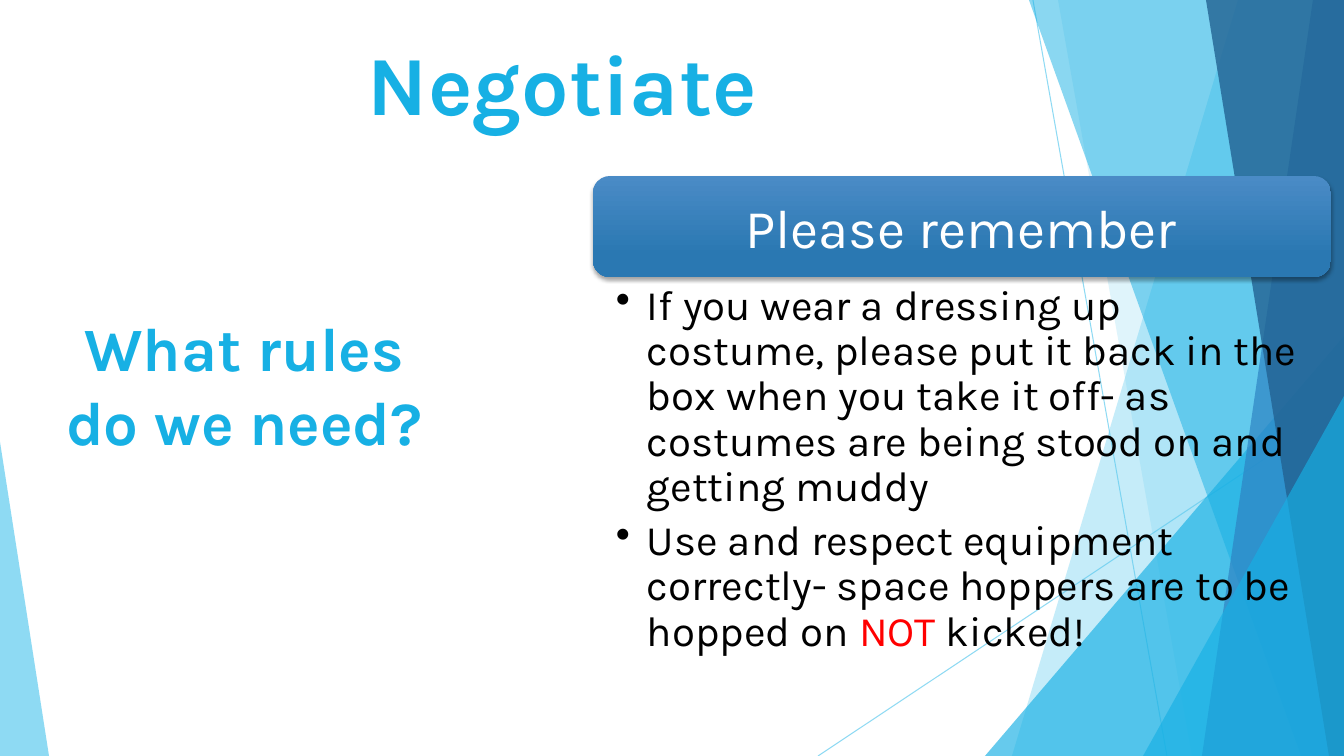
import pptx
import pptx.util
import pptx.dml.color
import pptx.enum.shapes
import pptx.enum.text
import pptx.oxml
import pptx.oxml.ns

WIDE, HIGH = 1344, 756
SKY, CYAN, BLUE, NAVY = "5FCBEF", "17B0E4", "2E83C3", "226292"
KIND = pptx.enum.shapes.MSO_SHAPE
ALIGN = pptx.enum.text.PP_ALIGN
MID = pptx.enum.text.MSO_ANCHOR.MIDDLE
TOP = pptx.enum.text.MSO_ANCHOR.TOP


def px(num):
    return pptx.util.Emu(round(num * 12192000 / WIDE))


def tint(part, code):
    part.rgb = pptx.dml.color.RGBColor.from_string(code)


def add_xml(host, text):
    space = pptx.oxml.ns.nsdecls("a")
    host.append(pptx.oxml.parse_xml(text.replace(">", f" {space}>", 1)))


def fade(root, share):
    for color in root.iter(pptx.oxml.ns.qn("a:srgbClr")):
        add_xml(color, f'<a:alpha val="{share * 1000}"></a:alpha>')


def paint(shape, code, share):
    shape.shadow.inherit = False
    shape.fill.solid()
    tint(shape.fill.fore_color, code)
    shape.line.fill.background()
    fade(shape._element.spPr, share)


def draw_ray(slide, start, end):
    kind = pptx.enum.shapes.MSO_CONNECTOR.STRAIGHT
    ray = slide.shapes.add_connector(kind, *map(px, start + end))
    tint(ray.line.color, SKY)
    ray.line.width = pptx.util.Pt(0.75)
    spot = ray._element.spPr
    fade(spot, 70)
    add_xml(spot, "<a:effectLst></a:effectLst>")


def draw_shard(slide, high, low, code, share):
    pen = slide.shapes.build_freeform(px(high), 0, scale=1.0)
    spots = [(WIDE, 0), (WIDE, HIGH), (low, HIGH)]
    pen.add_line_segments([(px(x), px(y)) for x, y in spots], close=True)
    paint(pen.convert_to_shape(), code, share)


def draw_peak(slide, left, top, width, tip, code, share):
    box = map(px, (left, top, width, HIGH - top))
    peak = slide.shapes.add_shape(KIND.ISOSCELES_TRIANGLE, *box)
    peak.adjustments[0] = tip
    paint(peak, code, share)


def draw_banner(slide, *box):
    panel = slide.shapes.add_shape(KIND.ROUNDED_RECTANGLE, *map(px, box))
    panel.line.fill.background()
    panel.fill.gradient()
    panel.fill.gradient_angle = 270
    for stop, code, place in zip(panel.fill.gradient_stops, ("4A8BC6", "2A78B2"), (0, 0.78)):
        tint(stop.color, code)
        stop.position = place
    add_xml(panel._element.spPr,
            '<a:effectLst><a:outerShdw blurRad="38100" dist="25400" dir="5400000" rotWithShape="0">'
            '<a:srgbClr val="000000"><a:alpha val="35000"/></a:srgbClr></a:outerShdw></a:effectLst>')


def add_box(slide, box, pads, anchor):
    frame = slide.shapes.add_textbox(*map(px, box)).text_frame
    frame.word_wrap = True
    frame.vertical_anchor = anchor
    (frame.margin_left, frame.margin_top,
     frame.margin_right, frame.margin_bottom) = map(px, pads)
    return frame


def style(para, size, code, bold=False, align=ALIGN.LEFT):
    para.alignment = align
    font = para.font
    font.name = "Karla"
    font.size = pptx.util.Pt(size)
    font.bold = bold
    tint(font.color, code)


def add_label(slide, text, box, pads, size, code, **look):
    frame = add_box(slide, box, pads, MID)
    para = frame.paragraphs[0]
    para.text = text
    style(para, size, code, **look)


def add_list(slide, box, items):
    frame = add_box(slide, box, (23, 5, 30, 5), TOP)
    for num, parts in enumerate(items):
        para = frame.add_paragraph() if num else frame.paragraphs[0]
        props = para._p.get_or_add_pPr()
        props.set("marL", str(px(31)))
        props.set("indent", str(px(-31)))
        add_xml(props, '<a:buChar char="•"></a:buChar>')
        para.line_spacing = 0.9
        para.space_after = pptx.util.Pt(6)
        style(para, 30, "000000")
        for text, code in parts:
            run = para.add_run()
            run.text = text
            tint(run.font.color, code)


def draw_decor(slide):
    draw_ray(slide, (1033, 0), (1167, HIGH))
    draw_ray(slide, (WIDE, 406), (818, HIGH))
    draw_shard(slide, 1238, 1012, SKY, 36)
    draw_shard(slide, 1058, 1192, SKY, 20)
    draw_peak(slide, 985, 336, 359, 1, CYAN, 66)
    draw_shard(slide, 1029, 1301, CYAN, 50)
    draw_shard(slide, 1313, 1202, BLUE, 70)
    draw_shard(slide, 1206, 1329, NAVY, 80)
    draw_peak(slide, 1143, 396, 201, 1, CYAN, 66)
    draw_peak(slide, 0, 442, 49, 0, SKY, 70)


def main():
    deck = pptx.Presentation()
    deck.slide_width, deck.slide_height = px(WIDE), px(HIGH)
    slide = deck.slides.add_slide(deck.slide_layouts[6])
    draw_decor(slide)
    add_label(slide, "Negotiate", (358, 26, 672, 112), (10, 5, 10, 5), 60, CYAN, bold=True)
    add_label(slide, "What rules do we need?", (49, 198, 391, 452), (10, 5, 10, 85),
              44, CYAN, bold=True, align=ALIGN.CENTER)
    draw_banner(slide, 593, 176, 738, 101)
    add_label(slide, "Please remember", (597, 181, 728, 91), (16, 16, 16, 16),
              39, "FFFFFF", align=ALIGN.CENTER)
    add_list(slide, (593, 279, 738, 427), [
        [("If you wear a dressing up costume, please put it back in the box when you "
          "take it off- as costumes are being stood on and getting muddy", "000000")],
        [("Use and respect equipment correctly- space hoppers are to be hopped on ", "000000"),
         ("NOT ", "FF0000"), ("kicked!", "000000")],
    ])
    deck.save("out.pptx")


if __name__ == "__main__":
    main()
